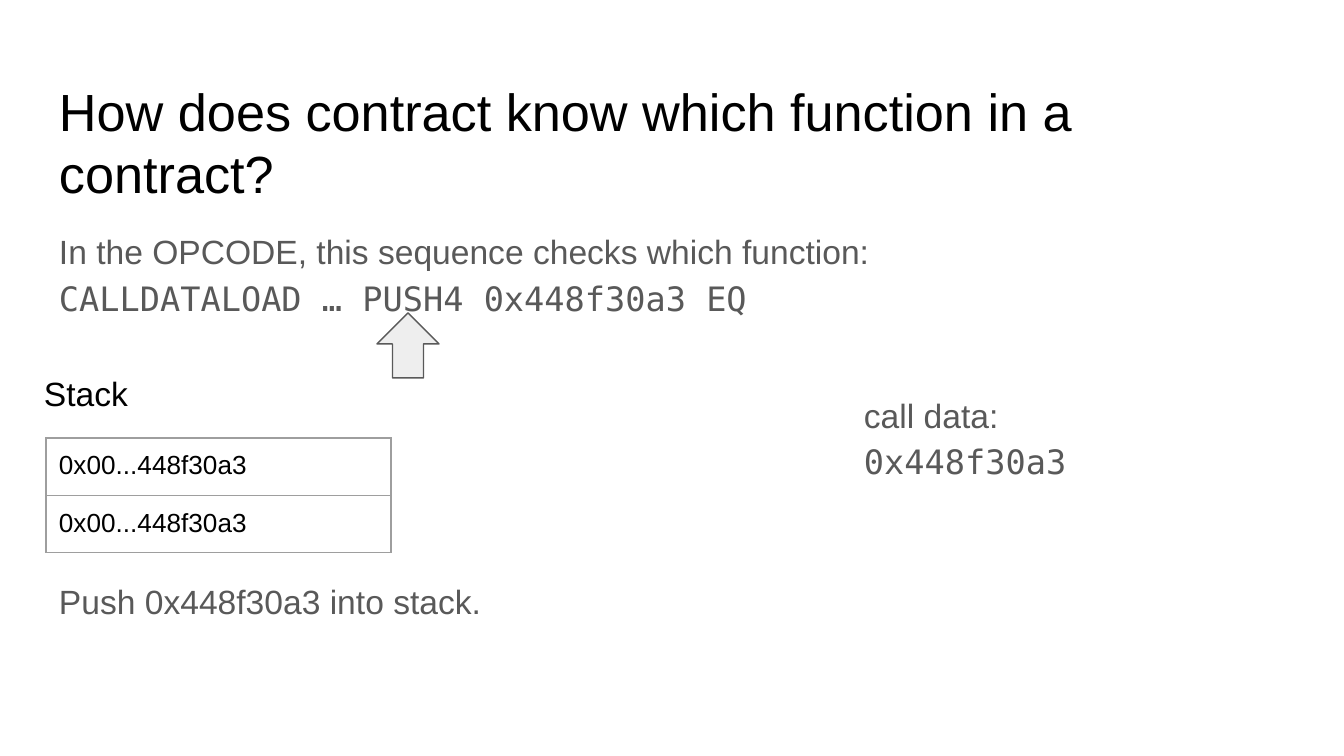
import pptx
import pptx.dml.color
import pptx.enum.shapes
import pptx.oxml
import pptx.oxml.ns
import pptx.util

EMU_PER_PX = 914400 / 134.4
SANS, MONO = "Arial", "DejaVu Sans Mono"
COLORS = {"black": "000000", "text": "595959", "fill": "EEEEEE", "border": "9E9E9E"}
INSET = 13


def px(n):
    return pptx.util.Emu(round(n * EMU_PER_PX))


def rgb(name):
    return pptx.dml.color.RGBColor.from_string(COLORS[name])


def style_run(r, size, color, font=SANS):
    r.font.name = font
    r.font.size = pptx.util.Pt(size)
    r.font.color.rgb = rgb(color)


def add_text(s, box, paragraphs, size, color, spacing=1.0, gap=0):
    """Each paragraph is a list of (text, font); gap parts the paragraphs, in points."""
    tf = s.shapes.add_textbox(*map(px, box)).text_frame
    tf.word_wrap = True
    tf.margin_left = tf.margin_right = tf.margin_top = tf.margin_bottom = px(INSET)
    for i, pieces in enumerate(paragraphs):
        p = tf.add_paragraph() if i else tf.paragraphs[0]
        p.line_spacing = spacing
        p.space_before = pptx.util.Pt(gap if i else 0)
        p.text = "".join(text for text, font in pieces[:1])
        for text, font in pieces[1:]:
            p.add_run().text = text
        for r, (text, font) in zip(p.runs, pieces):
            style_run(r, size, color, font)
    return tf


def set_borders(cell, color, width):
    tcPr = cell._tc.get_or_add_tcPr()
    for i, side in enumerate(("lnL", "lnR", "lnT", "lnB")):
        tcPr.insert(i, pptx.oxml.parse_xml(
            f'<a:{side} {pptx.oxml.ns.nsdecls("a")} w="{pptx.util.Pt(width)}">'
            f'<a:solidFill><a:srgbClr val="{COLORS[color]}"/></a:solidFill></a:{side}>'))


def add_stack(s, left, top, width, row_height, values):
    n = len(values)
    table = s.shapes.add_table(n, 1, px(left), px(top), px(width), px(row_height * n)).table
    table.first_row = table.horz_banding = False
    for i, value in enumerate(values):
        table.rows[i].height = px(row_height)
        cell = table.cell(i, 0)
        cell.text = value
        cell.fill.background()
        cell.margin_left = cell.margin_right = px(INSET)
        cell.margin_top = cell.margin_bottom = px(INSET)
        style_run(cell.text_frame.paragraphs[0].runs[0], 14, "black")
        set_borders(cell, "border", 0.75)


def add_up_arrow(s, box):
    arrow = s.shapes.add_shape(pptx.enum.shapes.MSO_SHAPE.UP_ARROW, *map(px, box))
    arrow.shadow.inherit = False
    arrow.fill.solid()
    arrow.fill.fore_color.rgb = rgb("fill")
    arrow.line.color.rgb = rgb("text")
    arrow.line.width = pptx.util.Pt(0.75)


def main():
    prs = pptx.Presentation()
    prs.slide_width, prs.slide_height = px(1344), px(756)
    s = prs.slides.add_slide(prs.slide_layouts[6])

    # Title
    add_text(s, (46, 66, 1252, 84),
             [[("How does contract know which function in a contract?", SANS)]], 28, "black")

    # Opcode sequence, with the current step below the stack
    tf = add_text(s, (46, 212, 1252, 460), [
        [("In the OPCODE, this sequence checks which function:", SANS)],
        [("CALLDATALOAD … PUSH4 0x448f30a3 EQ", MONO)],
        [("Push 0x448f30a3 into stack.", SANS)],
    ], 18, "text", spacing=1.15)
    tf.paragraphs[2].space_before = pptx.util.Pt(138)

    # Stack
    add_stack(s, 46, 438, 345, 56, ["0x00...448f30a3"] * 2)
    add_text(s, (31, 360, 360, 81), [[("Stack", SANS)]], 18, "black")

    # Call data
    add_text(s, (851, 376, 271, 145),
             [[("call data: ", SANS), ("0x448f30a3", MONO)]], 18, "text", spacing=1.15)

    # Pointer to the current opcode
    add_up_arrow(s, (377, 313, 62, 65))

    prs.save("out.pptx")


if __name__ == "__main__":
    main()
